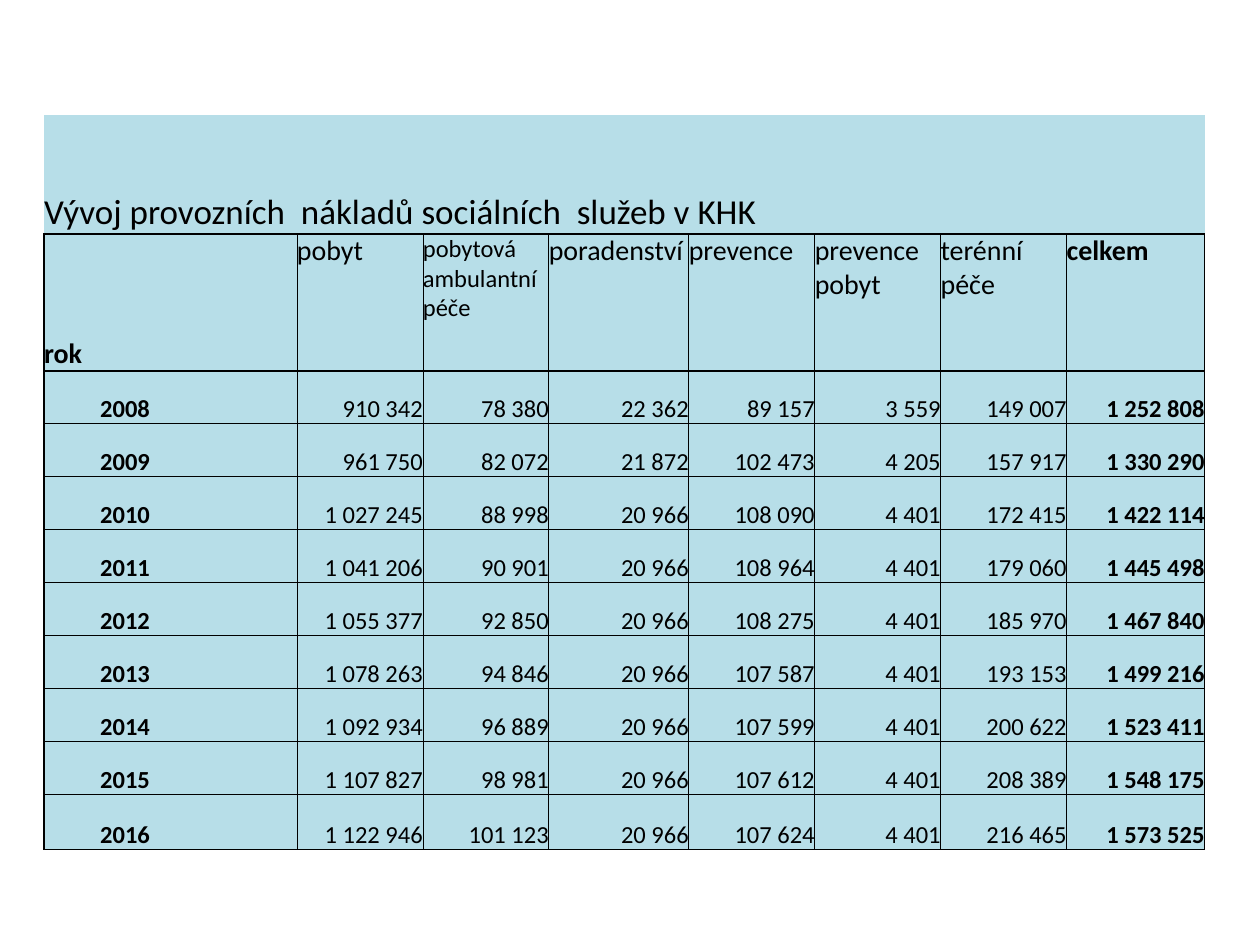
from dataclasses import dataclass

import pptx
import pptx.dml.color
import pptx.enum.text
import pptx.oxml.ns
import pptx.table
import pptx.util
from lxml import etree

PX = 914400 // 126
FONT, INK, PALE_BLUE = "Calibri", "000000", "B7DEE8"
THIN, THICK = 0.5, 1
ANCHOR = pptx.enum.text.MSO_ANCHOR
ALIGN = pptx.enum.text.PP_ALIGN

TITLE = "Vývoj provozních  nákladů sociálních  služeb v KHK"
HEADINGS = ["rok", "", "pobyt", "pobytová ambulantní péče", "poradenství",
            "prevence", "prevence pobyt", "terénní péče", "celkem"]
COSTS = {
    2008: (910342, 78380, 22362, 89157, 3559, 149007, 1252808),
    2009: (961750, 82072, 21872, 102473, 4205, 157917, 1330290),
    2010: (1027245, 88998, 20966, 108090, 4401, 172415, 1422114),
    2011: (1041206, 90901, 20966, 108964, 4401, 179060, 1445498),
    2012: (1055377, 92850, 20966, 108275, 4401, 185970, 1467840),
    2013: (1078263, 94846, 20966, 107587, 4401, 193153, 1499216),
    2014: (1092934, 96889, 20966, 107599, 4401, 200622, 1523411),
    2015: (1107827, 98981, 20966, 107612, 4401, 208389, 1548175),
    2016: (1122946, 101123, 20966, 107624, 4401, 216465, 1573525),
}
COLUMN_WIDTHS = [106, 147, 126, 126, 140, 126, 126, 126, 138]
ROW_HEIGHTS = [119, 137] + [53] * 8 + [55]
LAST_COLUMN, LAST_ROW = len(COLUMN_WIDTHS) - 1, len(ROW_HEIGHTS) - 1


@dataclass
class CellStyle:
    size: int
    bold: bool = False
    align: ALIGN = ALIGN.LEFT
    anchor: ANCHOR = ANCHOR.BOTTOM


def px(length: int) -> int:
    return length * PX


def rgb(colour: str) -> pptx.dml.color.RGBColor:
    return pptx.dml.color.RGBColor.from_string(colour)


def border_widths(row: int, column: int) -> dict[str, float]:
    """Widths in points by side; zero means no line."""
    if row == 0:
        return {"L": 0, "R": 0, "T": 0, "B": THICK}
    # The year takes two columns with no line between them
    left = {0: THICK, 1: 0}.get(column, THIN)
    right = {0: 0, LAST_COLUMN: THICK}.get(column, THIN)
    return {"L": left, "R": right,
            "T": THICK if row <= 2 else THIN,
            "B": THICK if row in (1, LAST_ROW) else THIN}


def draw_borders(cell: pptx.table._Cell, widths: dict[str, float]) -> None:
    properties = cell._tc.get_or_add_tcPr()
    qn = pptx.oxml.ns.qn
    for side, width in widths.items():
        line = etree.SubElement(properties, qn(f"a:ln{side}"), w=str(pptx.util.Pt(width)))
        if width:
            fill = etree.SubElement(line, qn("a:solidFill"))
            etree.SubElement(fill, qn("a:srgbClr"), val=INK)
        else:
            etree.SubElement(line, qn("a:noFill"))


def style_for(row: int, column: int) -> CellStyle:
    bold = column in (0, LAST_COLUMN)
    if row == 0:
        return CellStyle(20)
    if row == 1:
        return CellStyle(14 if column == 3 else 16, bold,
                         anchor=ANCHOR.BOTTOM if column == 0 else ANCHOR.TOP)
    return CellStyle(14, bold, ALIGN.RIGHT)


def fill_cell(cell: pptx.table._Cell, text: str, style: CellStyle) -> None:
    cell.fill.solid()
    cell.fill.fore_color.rgb = rgb(PALE_BLUE)
    cell.margin_left = cell.margin_right = cell.margin_top = cell.margin_bottom = 0
    cell.vertical_anchor = style.anchor
    cell.text = text
    paragraph = cell.text_frame.paragraphs[0]
    paragraph.alignment = style.align
    paragraph.font.name = FONT
    paragraph.font.size = pptx.util.Pt(style.size)
    paragraph.font.bold = style.bold
    paragraph.font.color.rgb = rgb(INK)


def main() -> None:
    presentation = pptx.Presentation()
    presentation.slide_width, presentation.slide_height = px(1260), px(945)
    slide = presentation.slides.add_slide(presentation.slide_layouts[6])

    # Title row, headings, then one row a year
    rows = [[TITLE] + [""] * LAST_COLUMN, HEADINGS]
    for year, costs in COSTS.items():
        rows.append([str(year), ""] + [f"{cost:,}".replace(",", " ") for cost in costs])

    # Table grid
    cost_table = slide.shapes.add_table(
        len(ROW_HEIGHTS), len(COLUMN_WIDTHS), px(44), px(115),
        px(sum(COLUMN_WIDTHS)), px(sum(ROW_HEIGHTS))).table
    cost_table.first_row = cost_table.horz_banding = False
    for column, width in zip(cost_table.columns, COLUMN_WIDTHS):
        column.width = px(width)
    for row, height in zip(cost_table.rows, ROW_HEIGHTS):
        row.height = px(height)

    # Cell contents
    for r, texts in enumerate(rows):
        for c, text in enumerate(texts):
            cell = cost_table.cell(r, c)
            draw_borders(cell, border_widths(r, c))
            fill_cell(cell, text, style_for(r, c))
    cost_table.cell(0, 0).merge(cost_table.cell(0, LAST_COLUMN))

    presentation.save("out.pptx")


if __name__ == "__main__":
    main()
